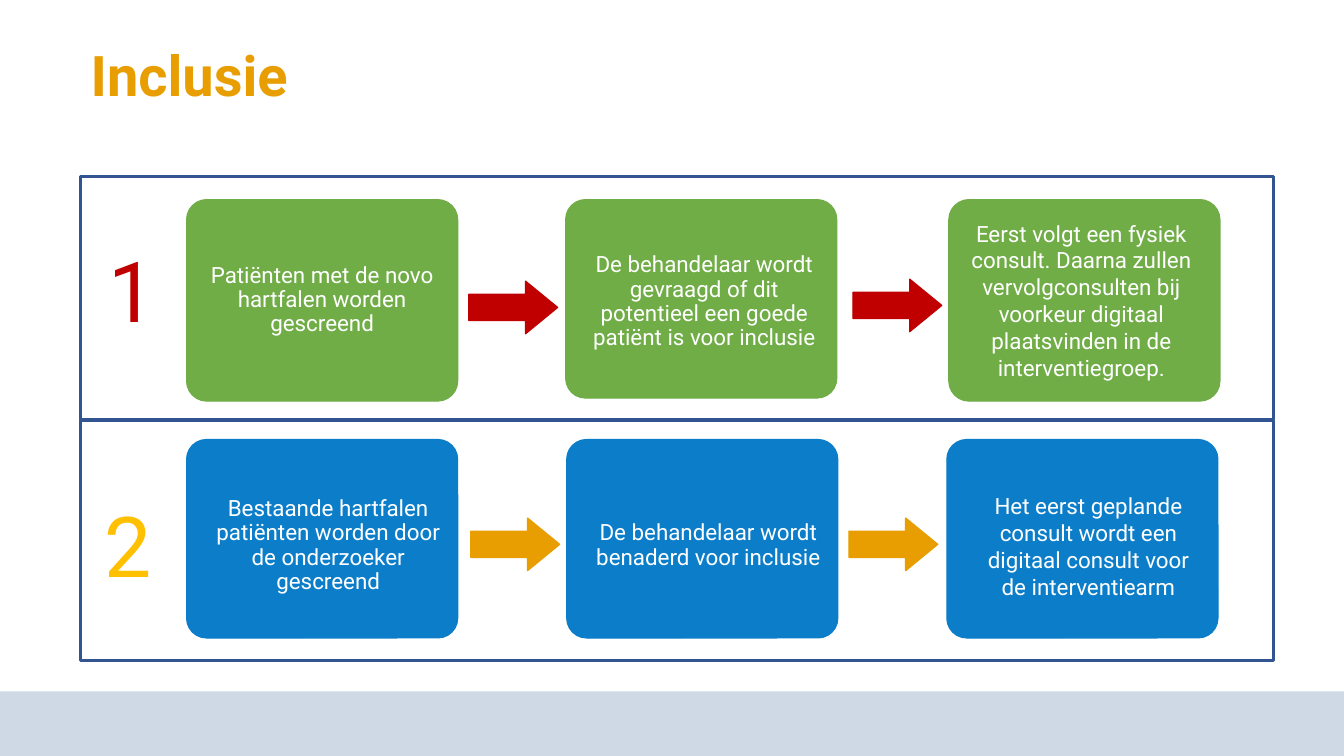
from pptx import Presentation
from pptx.dml.color import RGBColor
from pptx.enum.shapes import MSO_SHAPE
from pptx.enum.text import MSO_ANCHOR, PP_ALIGN
from pptx.util import Inches, Pt

RECT = MSO_SHAPE.RECTANGLE
ROUND = MSO_SHAPE.ROUNDED_RECTANGLE
ARROW = MSO_SHAPE.RIGHT_ARROW
MIDDLE = MSO_ANCHOR.MIDDLE
LEFT, CENTER = PP_ALIGN.LEFT, PP_ALIGN.CENTER

WHITE = RGBColor(0xFF, 0xFF, 0xFF)
PALE = RGBColor(0xCE, 0xD9, 0xE5)
ORANGE = RGBColor(0xE8, 0x9E, 0x00)
YELLOW = RGBColor(0xFF, 0xC0, 0x00)
RED = RGBColor(0xC0, 0x00, 0x00)
GREEN = RGBColor(0x70, 0xAD, 0x47)
BLUE = RGBColor(0x0C, 0x7E, 0xC9)
NAVY = RGBColor(0x32, 0x54, 0x91)

FONT = "Roboto"
INSET = 0.17
STEP_W = 2.69

# Steps: left, height, text shift right, text shift down, line spacing, text
ROWS = [
    {
        "number": "1", "tint": RED, "spot": (0.98, 2.32),
        "frame": (1.75, 2.41), "top": 1.98, "fill": GREEN,
        "steps": [
            (1.85, 2, 0, 0, 0.9,
             "Patiënten met de novo hartfalen worden gescreend"),
            (5.61, 1.97, 0.03, 0.03, 0.9,
             "De behandelaar wordt gevraagd of dit potentieel een goede "
             "patiënt is voor inclusie"),
            (9.41, 2, -0.03, 0, 1.0,
             "Eerst volgt een fysiek consult. Daarna zullen "
             "vervolgconsulten bij voorkeur digitaal plaatsvinden in de "
             "interventiegroep."),
        ],
        "arrows": [(4.65, 2.79), (8.46, 2.77)], "point": RED,
    },
    {
        "number": "2", "tint": YELLOW, "spot": (0.94, 4.85),
        "frame": (4.17, 2.38), "top": 4.36, "fill": BLUE,
        "steps": [
            (1.85, 1.97, 0.06, 0.07, 0.9,
             "Bestaande hartfalen patiënten worden door de onderzoeker "
             "gescreend"),
            (5.62, 1.97, 0.06, 0.07, 0.9,
             "De behandelaar wordt benaderd voor inclusie"),
            (9.39, 1.97, 0.06, 0.07, 1.0,
             "Het eerst geplande consult wordt een digitaal consult voor "
             "de interventiearm"),
        ],
        "arrows": [(4.67, 5.14), (8.42, 5.14)], "point": ORANGE,
    },
]

prs = Presentation()
prs.slide_width = Inches(13.33)
prs.slide_height = Inches(7.5)
slide = prs.slides.add_slide(prs.slide_layouts[5])


def add_block(kind, x, y, w, h, fill=None, line=None, width=0.75):
    """Add a flat shape; without a fill or line colour that part is clear."""
    block = slide.shapes.add_shape(
        kind, Inches(x), Inches(y), Inches(w), Inches(h))
    block.shadow.inherit = False
    if fill is None:
        block.fill.background()
    else:
        block.fill.solid()
        block.fill.fore_color.rgb = fill
    if line is None:
        block.line.fill.background()
    else:
        block.line.color.rgb = line
        block.line.width = Pt(width)
    return block


def set_text(frame, text, size, color, align=LEFT, bold=False):
    frame.word_wrap = True
    frame.text = text
    para = frame.paragraphs[0]
    para.alignment = align
    font = para.runs[0].font
    font.name = FONT
    font.size = Pt(size)
    font.bold = bold
    font.color.rgb = color
    return para


add_block(RECT, 0, 6.86, 13.33, 0.64, PALE)

title = slide.shapes.title
title.left, title.top = Inches(0.8), Inches(0.05)
title.width, title.height = Inches(11.48), Inches(1.45)
title.text_frame.vertical_anchor = MIDDLE
para = set_text(title.text_frame, "Inclusie", 40, ORANGE, bold=True)
para.line_spacing = 0.9

for row in ROWS:
    for x, h, right, down, spacing, text in row["steps"]:
        step = add_block(
            ROUND, x, row["top"], STEP_W, h, row["fill"], row["fill"])
        step.adjustments[0] = 0.1
        frame = step.text_frame
        frame.vertical_anchor = MIDDLE
        frame.margin_left = Inches(INSET + right)
        frame.margin_right = Inches(INSET - right)
        frame.margin_top = Inches(INSET + down)
        frame.margin_bottom = Inches(INSET - down)
        para = set_text(frame, text, 16, WHITE, CENTER)
        para.line_spacing = spacing

    for x, y in row["arrows"]:
        arrow = add_block(
            ARROW, x, y, 0.88, 0.52, row["point"], row["point"], 1)
        arrow.adjustments[0] = 0.5
        arrow.adjustments[1] = 0.61

    y, h = row["frame"]
    add_block(RECT, 0.8, y, 11.83, h, line=NAVY, width=2)

    x, y = row["spot"]
    label = slide.shapes.add_textbox(
        Inches(x), Inches(y), Inches(0.63), Inches(1.11))
    set_text(label.text_frame, row["number"], 60, row["tint"])

prs.save("out.pptx")
